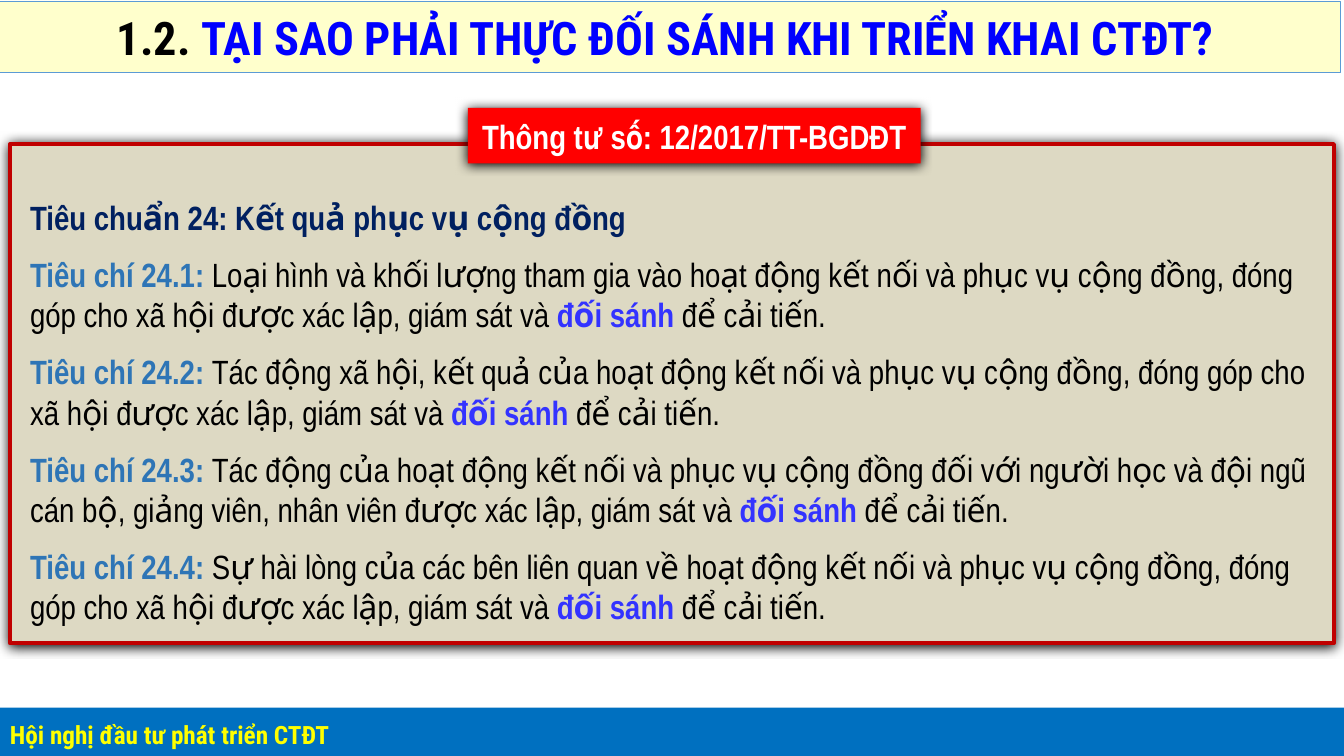
from lxml.etree import SubElement
from pptx import Presentation
from pptx.dml.color import RGBColor
from pptx.enum.lang import MSO_LANGUAGE_ID as Language
from pptx.enum.shapes import MSO_SHAPE as Shape
from pptx.enum.text import MSO_ANCHOR as Anchor, MSO_AUTO_SIZE as AutoSize, PP_ALIGN as Align
from pptx.oxml.ns import qn
from pptx.util import Pt

PX = 9144
COLORS = {
    "black": "000000", "white": "FFFFFF", "cream": "FFFFCC", "sky": "5B9BD5",
    "title": "0000FF", "footer": "0070C0", "yellow": "FFFF00", "sand": "DDD9C3",
    "crimson": "C00000", "red": "FF0000", "navy": "002060", "label": "2E75B6",
    "keyword": "3333FF",
}
HEADING_FONT = {"name": "Roboto Condensed"}
LABEL_FONT = {"name": "Arial Narrow", "size": Pt(24)}
BODY_FONT = {**LABEL_FONT, "language_id": Language.VIETNAMESE}
SPACED = {"space_before": Pt(6), "space_after": Pt(6)}
CRITERIA = [
    "Loại hình và khối lượng tham gia vào hoạt động kết nối và phục vụ cộng đồng, "
    "đóng góp cho xã hội",
    "Tác động xã hội, kết quả của hoạt động kết nối và phục vụ cộng đồng, "
    "đóng góp cho xã hội",
    "Tác động của hoạt động kết nối và phục vụ cộng đồng đối với người học và đội ngũ "
    "cán bộ, giảng viên, nhân viên",
    "Sự hài lòng của các bên liên quan về hoạt động kết nối và phục vụ cộng đồng, "
    "đóng góp cho xã hội",
]


def rgb(name):
    return RGBColor.from_string(COLORS[name])


def apply_format(target, values):
    for name, value in values.items():
        setattr(target, name, value)


def box(*lengths):
    return [length * PX for length in lengths]


def add_panel(slide, bounds, fill, line=None, line_width=0):
    shape = slide.shapes.add_shape(Shape.RECTANGLE, *box(*bounds))
    shape.shadow.inherit = False
    shape.fill.solid()
    shape.fill.fore_color.rgb = rgb(fill)
    if line:
        shape.line.color.rgb = rgb(line)
        shape.line.width = Pt(line_width)
    else:
        shape.line.fill.background()
    apply_format(shape.text_frame, {"word_wrap": True, "vertical_anchor": Anchor.MIDDLE})
    return shape


def add_shadow(shape):
    effects = shape._element.spPr.find(qn("a:effectLst"))
    shadow = SubElement(effects, qn("a:outerShdw"), blurRad=str(Pt(8.5)),
                        dist=str(Pt(1)), dir="5400000", algn="t", rotWithShape="0")
    SubElement(shadow, qn("a:srgbClr"), val=COLORS["black"])


def write_paragraph(paragraph, runs, font, **layout):
    apply_format(paragraph, {"alignment": Align.LEFT, **layout})
    for text, color, bold in runs:
        run = paragraph.add_run()
        run.text = text
        apply_format(run.font, {**font, "bold": bold})
        run.font.color.rgb = rgb(color)


def add_title(slide):
    title = add_panel(slide, (-3, 1, 1332, 71), "cream", "sky", 0.5)
    margins = {"margin_left": 119, "margin_top": 7, "margin_right": 13, "margin_bottom": 7}
    apply_format(title.text_frame, {name: px * PX for name, px in margins.items()})
    runs = [("1.2. ", "black", True),
            ("TẠI SAO PHẢI THỰC ĐỐI SÁNH KHI TRIỂN KHAI CTĐT?", "title", True)]
    write_paragraph(title.text_frame.paragraphs[0], runs, {**HEADING_FONT, "size": Pt(33)})


def add_footer(slide):
    footer = add_panel(slide, (0, 702, 1333, 51), "footer")
    write_paragraph(footer.text_frame.paragraphs[0],
                    [("Hội nghị đầu tư phát triển CTĐT", "yellow", True)],
                    {**HEADING_FONT, "size": Pt(18)}, line_spacing=1.1,
                    space_before=Pt(12), space_after=Pt(6))


def add_circular_label(slide):
    label = add_panel(slide, (464, 107, 449, 55), "red")
    add_shadow(label)
    write_paragraph(label.text_frame.paragraphs[0],
                    [("Thông tư số: 12/2017/TT-BGDĐT", "white", True)],
                    LABEL_FONT, alignment=Align.CENTER)


def add_criteria(slide):
    frame = slide.shapes.add_textbox(*box(20, 190, 1303, 441)).text_frame
    apply_format(frame, {"word_wrap": True, "auto_size": AutoSize.SHAPE_TO_FIT_TEXT})
    write_paragraph(frame.paragraphs[0],
                    [("Tiêu chuẩn 24: Kết quả phục vụ cộng đồng", "navy", True)],
                    BODY_FONT, **SPACED)
    for number, criterion in enumerate(CRITERIA, 1):
        runs = [(f"Tiêu chí 24.{number}: ", "label", True),
                (f"{criterion} được xác lập, giám sát và ", "black", False),
                ("đối sánh ", "keyword", True),
                ("để cải tiến.", "black", False)]
        write_paragraph(frame.add_paragraph(), runs, BODY_FONT, **SPACED)


def main():
    presentation = Presentation()
    apply_format(presentation, {"slide_width": 1333 * PX, "slide_height": 750 * PX})
    slide = presentation.slides.add_slide(presentation.slide_layouts[6])
    add_title(slide)
    add_footer(slide)
    add_shadow(add_panel(slide, (10, 143, 1313, 495), "sand", "crimson", 3))
    add_circular_label(slide)
    add_criteria(slide)
    presentation.save("out.pptx")


if __name__ == "__main__":
    main()
